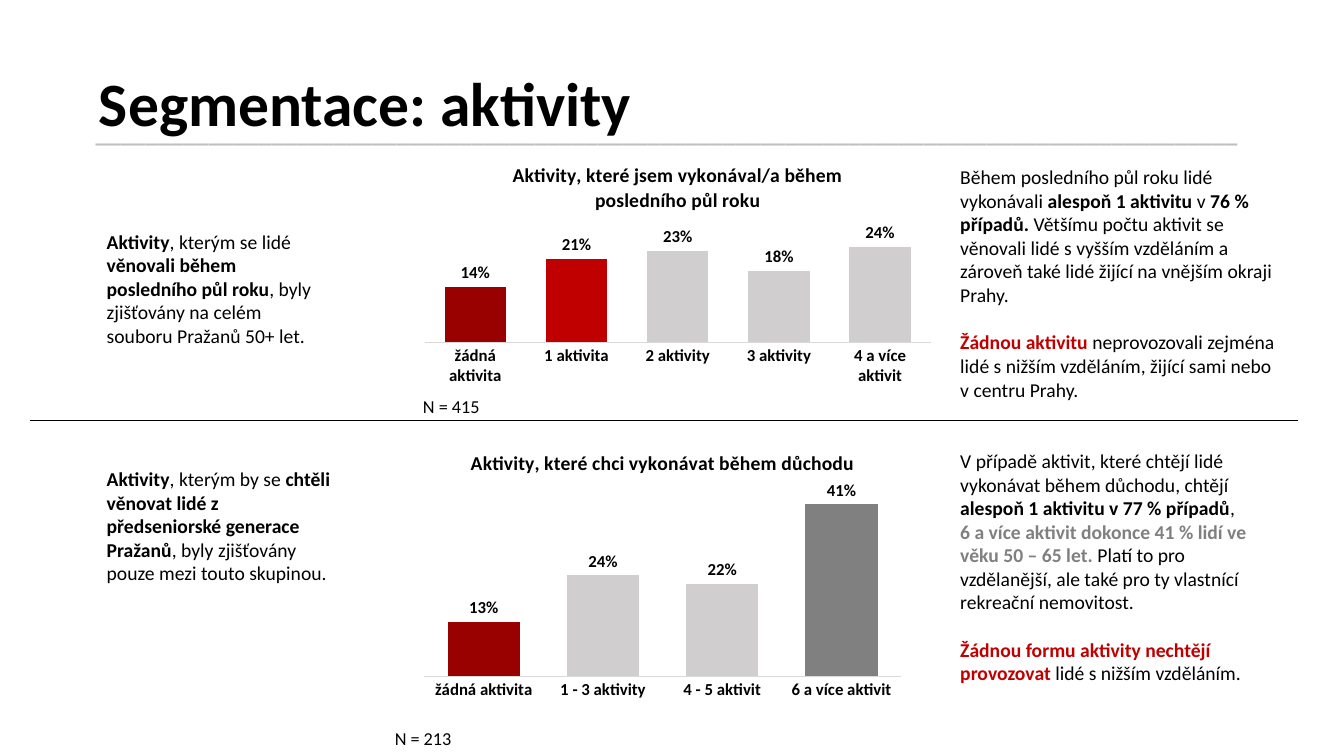
from dataclasses import dataclass

from lxml import etree
from pptx import Presentation
from pptx import util as u
from pptx.chart import data as chart_data
from pptx.dml.color import RGBColor
from pptx.enum import chart as chart_enum, shapes, text
from pptx.oxml import ns


@dataclass(frozen=True)
class Theme:
    """Colours, font and type sizes of the slide."""
    font: str = "Calibri"
    black: str = "000000"
    red: str = "C00000"
    dark_red: str = "990000"
    grey: str = "808080"
    light_grey: str = "D0CECE"
    rule: str = "BFBFBF"
    axis: str = "D9D9D9"
    title: int = 44
    rule_size: int = 18
    body: int = 14
    note: int = 13
    label: int = 12
    blank_line: float = 17.1


class SlideBuilder:
    """Adds styled elements to the current slide."""

    def __init__(self, slide, theme):
        self.slide = slide
        self.theme = theme

    def style(self, font, size, color=None, bold=False):
        font.name = self.theme.font
        font.size = u.Pt(size)
        font.bold = bold
        font.color.rgb = RGBColor.from_string(color or self.theme.black)

    def add_runs(self, paragraph, runs, size):
        for content, bold, color in runs:
            if content == "\n":
                paragraph.add_line_break()
                continue
            run = paragraph.add_run()
            run.text = content
            self.style(run.font, size, color, bold)

    def title(self, content, box):
        shape = self.slide.shapes.title
        shape.left, shape.top, shape.width, shape.height = map(u.Cm, box)
        shape.text_frame.vertical_anchor = text.MSO_ANCHOR.MIDDLE
        shape.text_frame.auto_size = text.MSO_AUTO_SIZE.NONE
        paragraph = shape.text_frame.paragraphs[0]
        paragraph.alignment = text.PP_ALIGN.LEFT
        paragraph.line_spacing = 0.9
        self.add_runs(paragraph, [(content, True, None)], self.theme.title)

    def text_box(self, box, paragraphs, size):
        shape = self.slide.shapes.add_textbox(*map(u.Cm, box))
        frame = shape.text_frame
        frame.word_wrap = True
        frame.auto_size = text.MSO_AUTO_SIZE.SHAPE_TO_FIT_TEXT
        for index, (blank_lines, runs) in enumerate(paragraphs):
            paragraph = frame.add_paragraph() if index else frame.paragraphs[0]
            paragraph.space_before = u.Pt(blank_lines * self.theme.blank_line)
            self.add_runs(paragraph, runs, size)

    def line(self, left, right, y):
        connector = self.slide.shapes.add_connector(
            shapes.MSO_CONNECTOR.STRAIGHT, u.Cm(left), u.Cm(y), u.Cm(right), u.Cm(y))
        connector.line.width = u.Pt(0.5)
        connector.line.color.rgb = RGBColor.from_string(self.theme.black)
        etree.SubElement(connector.element.spPr, ns.qn("a:effectLst"))

    def column_chart(self, box, heading, columns):
        data = chart_data.CategoryChartData(number_format="0%")
        data.categories = [name for name, value, color in columns]
        data.add_series("Podíl", [value for name, value, color in columns])
        chart = self.slide.shapes.add_chart(
            chart_enum.XL_CHART_TYPE.COLUMN_CLUSTERED, *map(u.Cm, box), data).chart
        self.style(chart.font, self.theme.label)
        chart.has_legend = False
        chart.has_title = True
        self.add_runs(chart.chart_title.text_frame.paragraphs[0],
                      [(heading, True, None)], self.theme.body)
        chart.chart_title.include_in_layout = False

        chart.value_axis.visible = False
        chart.value_axis.has_major_gridlines = False
        chart.value_axis.minimum_scale = 0
        axis = chart.category_axis
        axis.major_tick_mark = chart_enum.XL_TICK_MARK.NONE
        axis.format.line.width = u.Pt(0.75)
        axis.format.line.color.rgb = RGBColor.from_string(self.theme.axis)
        self.style(axis.tick_labels.font, self.theme.label, bold=True)

        plot = chart.plots[0]
        plot.gap_width = 65
        plot.overlap = -27
        plot.vary_by_categories = False
        plot.has_data_labels = True
        labels = plot.data_labels
        labels.show_value = True
        labels.number_format = "0%"
        labels.number_format_is_linked = False
        labels.position = chart_enum.XL_LABEL_POSITION.OUTSIDE_END
        self.style(labels.font, self.theme.label, bold=True)
        for index, (name, value, color) in enumerate(columns):
            fill = plot.series[0].points[index].format.fill
            fill.solid()
            fill.fore_color.rgb = RGBColor.from_string(color)


def main():
    theme = Theme()
    presentation = Presentation()
    presentation.slide_width = u.Cm(33.87)
    presentation.slide_height = u.Cm(19.05)
    slide = presentation.slides.add_slide(presentation.slide_layouts[5])
    builder = SlideBuilder(slide, theme)

    builder.text_box((2.16, 2.84, 29.57, 1.04),
                     [(0, [("_" * 91, True, theme.rule)])], theme.rule_size)
    builder.title("Segmentace: aktivity", (2.24, 0.84, 27.53, 3.68))

    builder.column_chart(
        (10.44, 3.73, 13.28, 6.12),
        "Aktivity, které jsem vykonával/a během posledního půl roku",
        [("žádná aktivita", 0.14, theme.dark_red),
         ("1 aktivita", 0.21, theme.red),
         ("2 aktivity", 0.23, theme.light_grey),
         ("3 aktivity", 0.18, theme.light_grey),
         ("4 a více aktivit", 0.24, theme.light_grey)])
    builder.column_chart(
        (10.44, 10.97, 12.52, 6.81),
        "Aktivity, které chci vykonávat během důchodu",
        [("žádná aktivita", 0.13, theme.dark_red),
         ("1 - 3 aktivity", 0.24, theme.light_grey),
         ("4 - 5 aktivit", 0.22, theme.light_grey),
         ("6 a více aktivit", 0.41, theme.grey)])

    for left, top, note in ((10.41, 9.83, "N = 415"), (9.7, 18.21, "N = 213")):
        builder.text_box((left, top, 2.34, 0.81), [(0, [(note, False, None)])], theme.note)

    builder.text_box((23.95, 4.04, 8.43, 13.41), [
        (0, [("Během posledního půl roku lidé vykonávali ", False, None),
             ("alespoň 1 aktivitu", True, None),
             (" v ", False, None),
             ("76 % případů. ", True, None),
             ("Většímu počtu aktivit se věnovali lidé s vyšším vzděláním a zároveň "
              "také lidé žijící na vnějším okraji Prahy.", False, None)]),
        (1, [("Žádnou aktivitu ", True, theme.red),
             ("neprovozovali zejména lidé s nižším vzděláním, žijící sami nebo "
              "v centru Prahy.", False, None)]),
        (2, [("V případě aktivit, které chtějí lidé vykonávat během důchodu, chtějí ",
              False, None),
             ("alespoň 1 aktivitu v 77 % případů", True, None),
             (", ", False, None),
             ("\n", False, None),
             ("6 a více aktivit dokonce 41 % lidí ve věku 50 – 65 let.", True, theme.grey),
             (" Platí to pro vzdělanější, ale také pro ty vlastnící rekreační nemovitost.",
              False, None)]),
        (1, [("Žádnou formu aktivity nechtějí provozovat ", True, theme.red),
             ("lidé s nižším vzděláním.", False, None)]),
    ], theme.body)
    builder.text_box((2.44, 5.66, 6.15, 9.25), [
        (0, [("Aktivity", True, None),
             (", kterým se lidé ", False, None),
             ("věnovali během posledního půl roku", True, None),
             (", byly zjišťovány na celém souboru Pražanů 50+ let.", False, None)]),
        (5, [("Aktivity", True, None),
             (", kterým by se ", False, None),
             ("chtěli věnovat lidé z předseniorské generace Pražanů", True, None),
             (", byly zjišťovány pouze mezi touto skupinou.", False, None)]),
    ], theme.body)

    builder.line(0.76, 32.72, 10.59)
    presentation.save("out.pptx")


if __name__ == "__main__":
    main()
